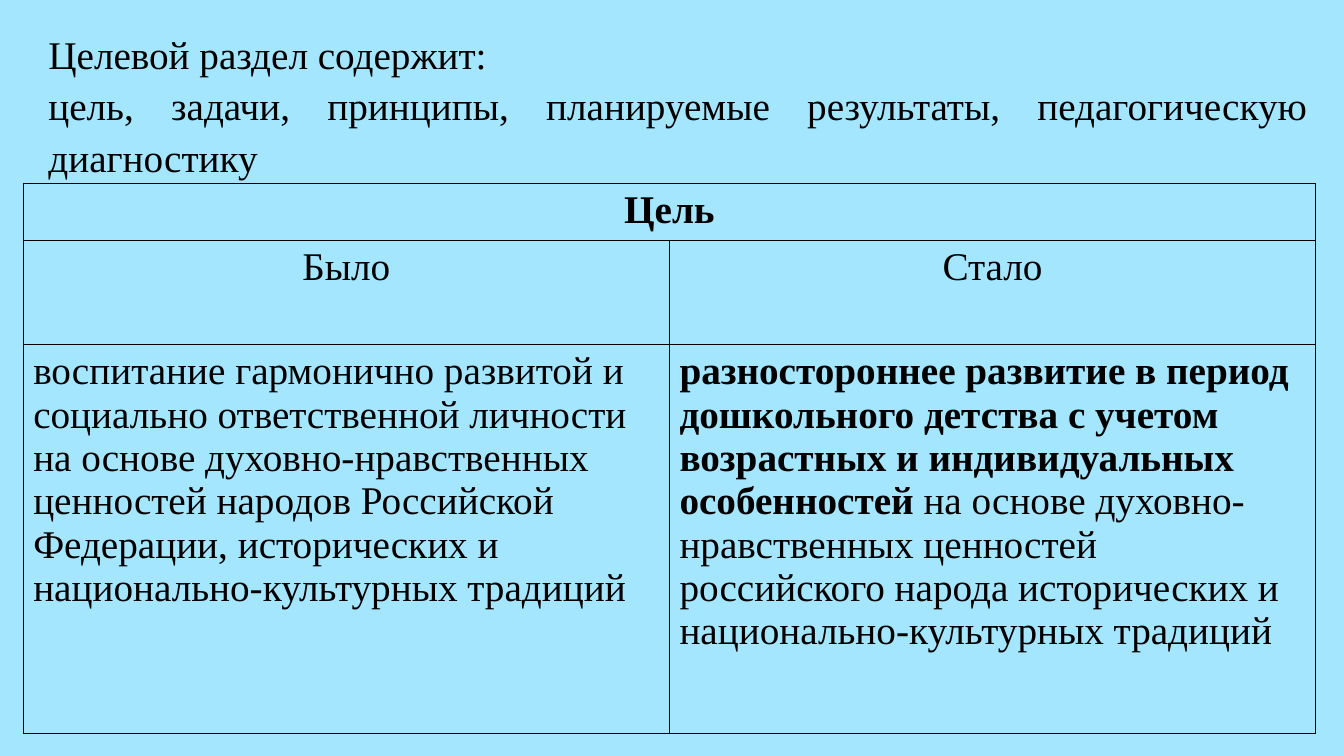
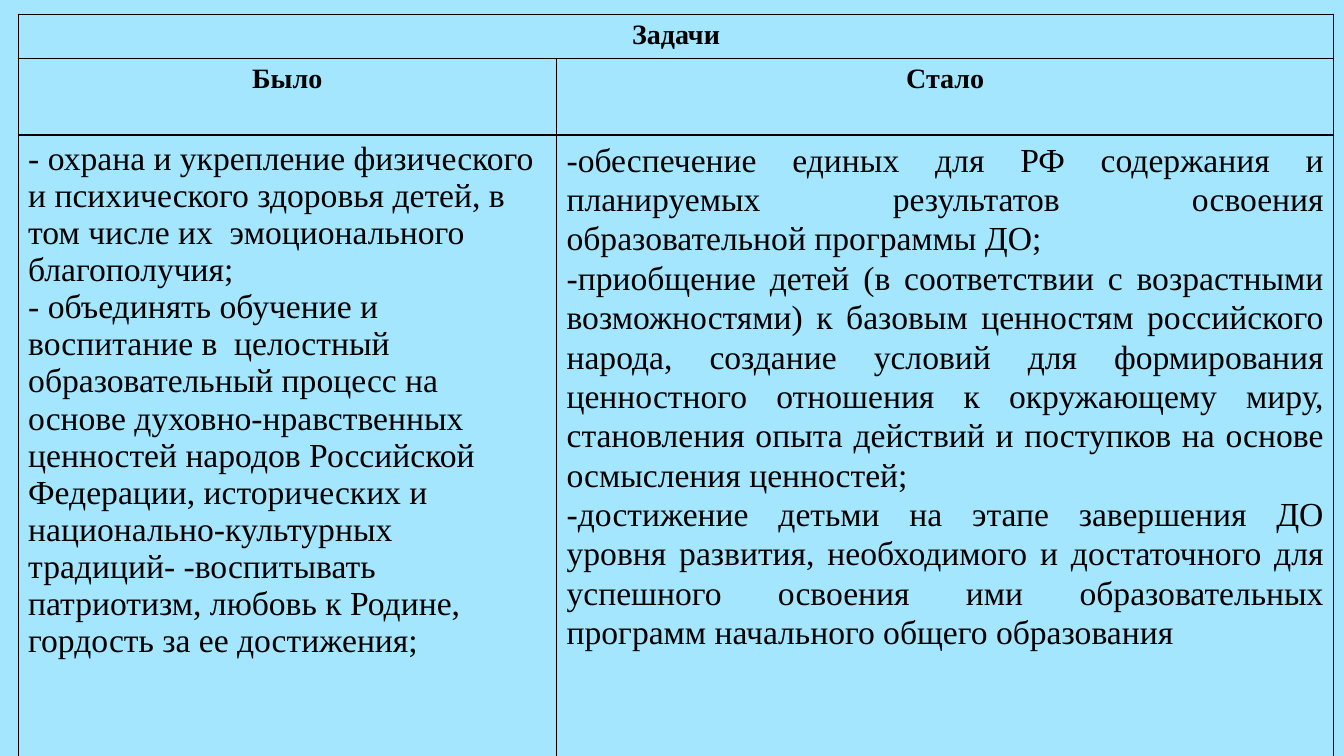
from dataclasses import dataclass

from lxml import etree
from pptx import Presentation
from pptx.dml.color import RGBColor
from pptx.enum.text import MSO_ANCHOR, MSO_AUTO_SIZE, PP_ALIGN as Align
from pptx.oxml.ns import qn
from pptx.util import Inches, Pt


@dataclass(frozen=True)
class Theme:
    """Colours, font and type sizes shared by the slides."""
    background: str = "A4E6FE"
    ink: str = "000000"
    font: str = "Times New Roman"
    large: int = 28
    medium: int = 24
    small: int = 20
    border: float = 1


@dataclass(frozen=True)
class CellStyle:
    """Paragraph look of a table cell."""
    size: int
    align: Align = Align.LEFT
    bold: bool = False
    spacing: float = 1.0


THEME = Theme()
TITLE_ONLY, BLANK = 5, 6


def write_paragraphs(frame, paragraphs, style):
    """Fill a text frame; a paragraph is a string or a list of (text, bold) spans."""
    for index, content in enumerate(paragraphs):
        para = frame.paragraphs[0] if index == 0 else frame.add_paragraph()
        para.alignment = style.align
        para.line_spacing = style.spacing
        para.space_before = para.space_after = Pt(0)
        para.font.name = THEME.font
        para.font.size = Pt(style.size)
        para.font.color.rgb = RGBColor.from_string(THEME.ink)
        if isinstance(content, str):
            para.font.bold = style.bold
            content = [(content, None)]
        for text, bold in content:
            span = para.add_run()
            span.text = text
            span.font.bold = bold


def outline_cell(cell):
    """Draw the four borders of a cell and leave it unfilled."""
    cell.fill.background()
    properties = cell._tc.get_or_add_tcPr()
    for index, side in enumerate(("lnL", "lnR", "lnT", "lnB")):
        line = etree.Element(qn(f"a:{side}"), w=str(Pt(THEME.border)))
        fill = etree.SubElement(line, qn("a:solidFill"))
        etree.SubElement(fill, qn("a:srgbClr"), val=THEME.ink)
        properties.insert(index, line)


def add_heading(page, box, paragraphs):
    """Place the title text in the given box."""
    title = page.shapes.title
    title.left, title.top, title.width, title.height = map(Inches, box)
    frame = title.text_frame
    frame.word_wrap = True
    frame.auto_size = MSO_AUTO_SIZE.NONE
    frame.vertical_anchor = MSO_ANCHOR.TOP
    write_paragraphs(frame, paragraphs, CellStyle(THEME.large, Align.JUSTIFY, spacing=1.09))


def add_comparison(page, origin, widths, heights, rows, styles):
    """Place a table with a merged heading, two column heads and two texts."""
    left, top = origin
    box = map(Inches, (left, top, sum(widths), sum(heights)))
    table = page.shapes.add_table(len(heights), len(widths), *box).table
    table.first_row = table.horz_banding = False
    for column, width in zip(table.columns, widths):
        column.width = Inches(width)
    for row, height in zip(table.rows, heights):
        row.height = Inches(height)
        for cell in row.cells:
            outline_cell(cell)
    table.cell(0, 0).merge(table.cell(0, len(widths) - 1))
    for row_index, (texts, row_styles) in enumerate(zip(rows, styles)):
        for column_index, (paragraphs, style) in enumerate(zip(texts, row_styles)):
            frame = table.cell(row_index, column_index).text_frame
            write_paragraphs(frame, paragraphs, style)


def build_goal(deck):
    """Build the slide that compares the goals."""
    page = deck.slides.add_slide(deck.slide_layouts[TITLE_ONLY])
    add_heading(page, (0.38, 0.21, 12.68, 1.55), [
        "Целевой раздел содержит:",
        "цель, задачи, принципы, планируемые результаты, педагогическую диагностику",
    ])
    goal_before = (
        "воспитание гармонично развитой и социально ответственной личности "
        "на основе духовно-нравственных ценностей народов Российской Федерации, "
        "исторических и национально-культурных традиций"
    )
    goal_after = [
        ("разностороннее развитие в период дошкольного детства с учетом "
         "возрастных и индивидуальных особенностей ", True),
        ("на основе духовно-нравственных ценностей российского народа "
         "исторических и национально-культурных традиций", False),
    ]
    head = CellStyle(THEME.large, Align.CENTER, bold=True)
    label = CellStyle(THEME.large, Align.CENTER)
    body = CellStyle(THEME.large)
    add_comparison(
        page, (0.23, 1.82), (6.41, 6.41), (0.57, 1.03, 3.86),
        [[["Цель"]], [["Было"], ["Стало"]], [[goal_before], [goal_after]]],
        [[head], [label, label], [body, body]],
    )


def build_tasks(deck):
    """Build the slide that compares the tasks."""
    page = deck.slides.add_slide(deck.slide_layouts[BLANK])
    tasks_before = [
        "- охрана и укрепление физического и психического здоровья детей, "
        "в том числе их  эмоционального благополучия;",
        "- объединять обучение и  воспитание в  целостный образовательный "
        "процесс на  основе духовно-нравственных ценностей народов Российской "
        "Федерации, исторических и национально-культурных традиций- "
        "-воспитывать патриотизм, любовь к Родине, гордость за ее достижения;",
    ]
    tasks_after = [
        "-обеспечение единых для РФ содержания и планируемых результатов "
        "освоения образовательной программы ДО;",
        "-приобщение детей (в соответствии с возрастными возможностями) "
        "к базовым ценностям российского народа, создание условий для "
        "формирования ценностного отношения к окружающему миру, становления "
        "опыта действий и поступков на основе осмысления ценностей;",
        "-достижение детьми на этапе завершения ДО уровня развития, "
        "необходимого и достаточного для успешного освоения ими "
        "образовательных программ начального общего образования",
    ]
    head = CellStyle(THEME.small, Align.CENTER, bold=True)
    before = CellStyle(THEME.medium)
    after = CellStyle(THEME.medium, Align.JUSTIFY, spacing=1.06)
    add_comparison(
        page, (0.18, 0.14), (5.34, 7.71), (0.44, 0.76, 6.17),
        [[["Задачи"]], [["Было"], ["Стало"]], [tasks_before, tasks_after]],
        [[head], [head, head], [before, after]],
    )


def main():
    """Build and save the deck."""
    deck = Presentation()
    deck.slide_width, deck.slide_height = Inches(13.33), Inches(7.5)
    fill = deck.slide_master.background.fill
    fill.solid()
    fill.fore_color.rgb = RGBColor.from_string(THEME.background)
    build_goal(deck)
    build_tasks(deck)
    deck.save("out.pptx")


if __name__ == "__main__":
    main()
